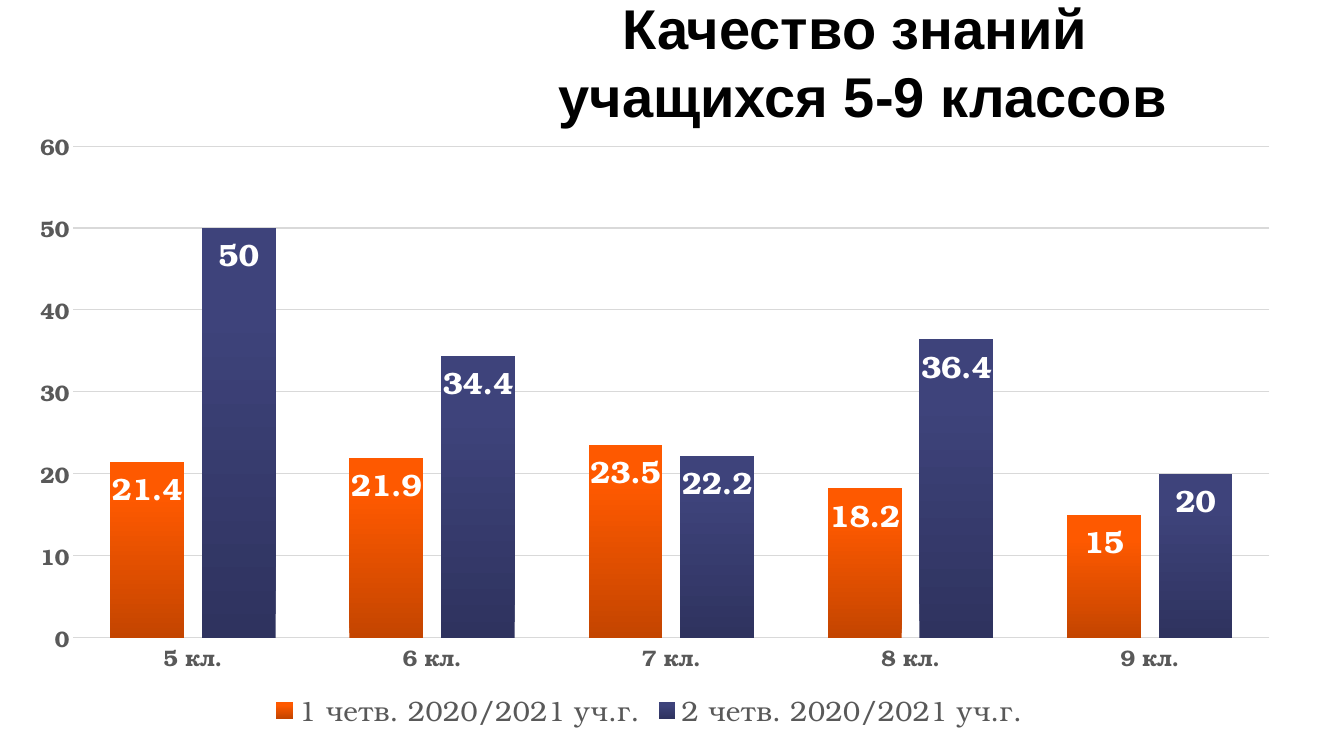
from lxml import etree
from pptx import Presentation
from pptx.chart.data import CategoryChartData
from pptx.dml.color import RGBColor
from pptx.enum.chart import XL_CHART_TYPE, XL_LABEL_POSITION, XL_LEGEND_POSITION, XL_TICK_MARK
from pptx.enum.text import MSO_ANCHOR, PP_ALIGN
from pptx.oxml import parse_xml
from pptx.oxml.ns import qn
from pptx.util import Inches, Pt

COLUMNS = XL_CHART_TYPE.COLUMN_CLUSTERED
INSIDE_END = XL_LABEL_POSITION.INSIDE_END
BOTTOM = XL_LEGEND_POSITION.BOTTOM
NO_TICK = XL_TICK_MARK.NONE
CENTER = PP_ALIGN.CENTER
TOP = MSO_ANCHOR.TOP

BLACK = RGBColor(0x00, 0x00, 0x00)
WHITE = RGBColor(0xFF, 0xFF, 0xFF)
GRAY = RGBColor(0x59, 0x59, 0x59)
GRID_GRAY = RGBColor(0xD9, 0xD9, 0xD9)
ORANGE = [(0, RGBColor(0xC4, 0x45, 0x00)), (80, RGBColor(0xFE, 0x59, 0x00)),
          (100, RGBColor(0xFF, 0x5A, 0x00))]
INDIGO = [(0, RGBColor(0x2F, 0x33, 0x5F)), (80, RGBColor(0x3E, 0x43, 0x7B)),
          (100, RGBColor(0x3D, 0x42, 0x7D))]

TITLE_FONT = "Arial"
CHART_FONT = "TeX Gyre Bonum"
BASE_FONT = "Cabin"

TITLE = ["Качество знаний ", "учащихся 5-9 классов"]
GRADES = ["5 кл.", "6 кл.", "7 кл.", "8 кл.", "9 кл."]
QUARTERS = [
    ("1 четв. 2020/2021 уч.г.", [21.4, 21.9, 23.5, 18.2, 15], ORANGE),
    ("2 четв. 2020/2021 уч.г.", [50, 34.4, 22.2, 36.4, 20], INDIGO),
]
TITLE_BOX = (2.65, -0.11, 11.81, 1.45)
CHART_BOX = (0.02, 0.6, 12.84, 6.69)
PLOT_AREA = {"x": 0.055, "y": 0.127, "w": 0.924, "h": 0.729}


def set_font(font, name, size, color, bold=False):
    font.name = name
    font.size = Pt(size)
    font.bold = bold
    font.color.rgb = color


def add_text(slide, lines, box, spacing, **font_format):
    shape = slide.shapes.add_textbox(*map(Inches, box))
    frame = shape.text_frame
    frame.word_wrap = True
    frame.vertical_anchor = TOP
    for index, line in enumerate(lines):
        paragraph = frame.add_paragraph() if index else frame.paragraphs[0]
        paragraph.alignment = CENTER
        paragraph.line_spacing = Pt(spacing)
        run = paragraph.add_run()
        run.text = line
        set_font(run.font, **font_format)


def fill_gradient(series, stops):
    series.format.fill.gradient()
    gradient = series.format._element if hasattr(series.format, "_element") else None
    gradient = series._element.find(".//" + qn("a:gradFill"))
    stop_list = gradient.find(qn("a:gsLst"))
    for stop in list(stop_list):
        stop_list.remove(stop)
    for position, color in stops:
        stop = etree.SubElement(stop_list, qn("a:gs"), pos=str(position * 1000))
        etree.SubElement(stop, qn("a:srgbClr"), val=str(color))
    gradient.find(qn("a:lin")).set("ang", str(270 * 60000))


def place_plot(chart):
    plot_area = chart._chartSpace.chart.plotArea
    for old_layout in plot_area.findall(qn("c:layout")):
        plot_area.remove(old_layout)
    layout = parse_xml('<c:layout xmlns:c="http://schemas.openxmlformats.org/'
                       'drawingml/2006/chart"><c:manualLayout/></c:layout>')
    settings = {"layoutTarget": "inner", "xMode": "edge", "yMode": "edge", **PLOT_AREA}
    for name, value in settings.items():
        etree.SubElement(layout[0], qn("c:" + name), val=str(value))
    plot_area.insert(0, layout)


def add_quality_chart(slide):
    data = CategoryChartData()
    data.categories = GRADES
    for name, values, _ in QUARTERS:
        data.add_series(name, values)
    chart = slide.shapes.add_chart(COLUMNS, *map(Inches, CHART_BOX), data).chart
    chart.has_title = False
    set_font(chart.font, BASE_FONT, 10, BLACK)
    place_plot(chart)

    chart.has_legend = True
    chart.legend.position = BOTTOM
    chart.legend.include_in_layout = False
    set_font(chart.legend.font, CHART_FONT, 20, GRAY)

    for axis in (chart.category_axis, chart.value_axis):
        axis.major_tick_mark = NO_TICK
        axis.minor_tick_mark = NO_TICK
        set_font(axis.tick_labels.font, CHART_FONT, 16, GRAY, bold=True)
    category_line = chart.category_axis.format.line
    category_line.color.rgb = GRID_GRAY
    category_line.width = Pt(1)

    value_axis = chart.value_axis
    value_axis.minimum_scale = 0
    value_axis.maximum_scale = 60
    value_axis.major_unit = 10
    value_axis.format.line.fill.background()
    grid_line = value_axis.major_gridlines.format.line
    grid_line.color.rgb = GRID_GRAY
    grid_line.width = Pt(0.75)

    plot = chart.plots[0]
    plot.gap_width = 100
    plot.overlap = -24
    plot.vary_by_categories = False
    for series, (_, _, stops) in zip(plot.series, QUARTERS):
        fill_gradient(series, stops)
        labels = series.data_labels
        labels.show_value = True
        labels.position = INSIDE_END
        set_font(labels.font, CHART_FONT, 22, WHITE, bold=True)


def main():
    presentation = Presentation()
    presentation.slide_width = Inches(13.33)
    presentation.slide_height = Inches(7.5)
    slide = presentation.slides.add_slide(presentation.slide_layouts[6])
    add_text(slide, TITLE, TITLE_BOX, 48, name=TITLE_FONT, size=40, color=BLACK, bold=True)
    add_quality_chart(slide)
    presentation.save("out.pptx")


if __name__ == "__main__":
    main()
